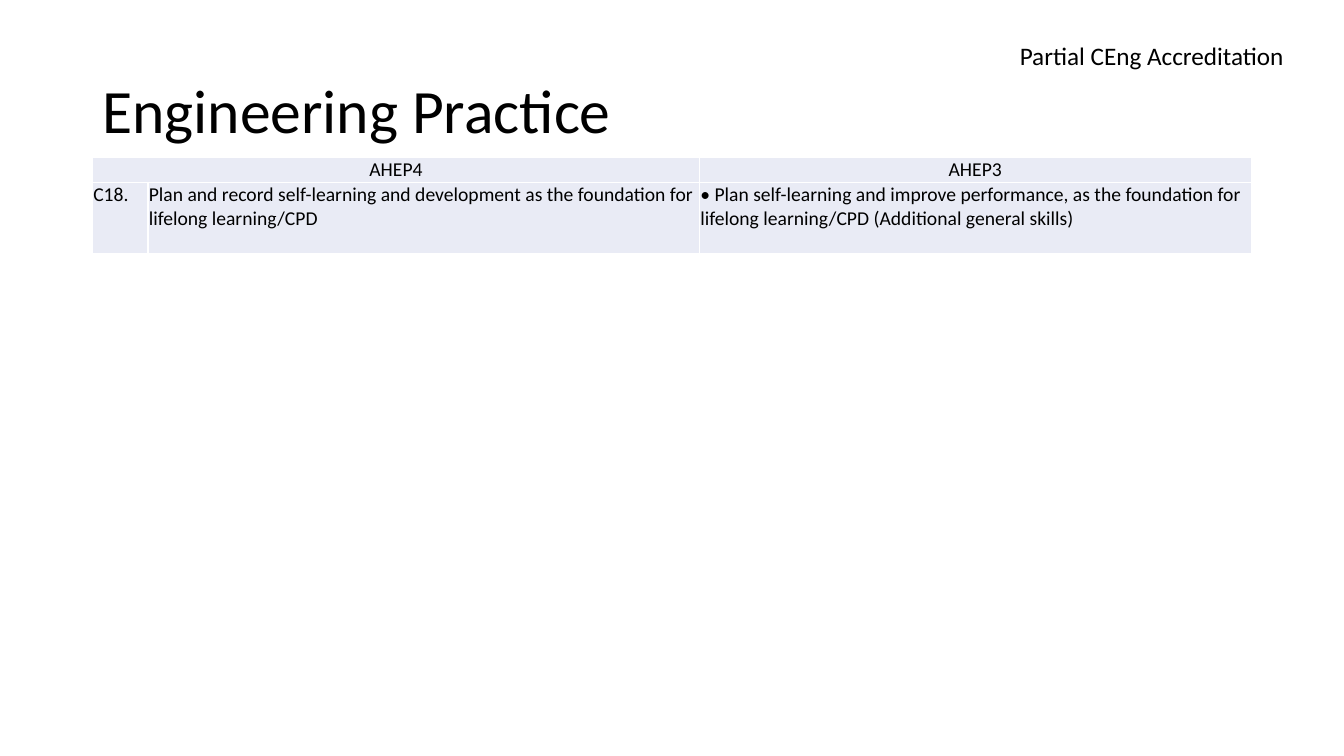
from pptx import Presentation
from pptx.dml.color import RGBColor
from pptx.enum.text import MSO_ANCHOR, PP_ALIGN
from pptx.util import Cm, Pt

TITLE = "Engineering Practice"
LABEL = "Partial CEng Accreditation"
ROWS = [
    ("AHEP4", "", "AHEP3"),
    (
        "C18.",
        "Plan and record self-learning and development as the foundation for lifelong learning/CPD",
        "• Plan self-learning and improve performance, as the foundation for "
        "lifelong learning/CPD (Additional general skills)",
    ),
]
COLUMN_WIDTHS = (1.4, 13.9, 13.9)
ROW_HEIGHTS = (0.62, 1.8)
LEFT = 2.33
WIDTH = sum(COLUMN_WIDTHS)
FONT = "Calibri"
BLACK = RGBColor(0x00, 0x00, 0x00)
PALE_BLUE = RGBColor(0xE9, 0xEB, 0xF5)


def write(frame, text, size):
    para = frame.paragraphs[0]
    para.text = text
    para.font.name = FONT
    para.font.size = Pt(size)
    para.font.color.rgb = BLACK
    return para


def add_text(page, text, size, left, top, width, height):
    frame = page.shapes.add_textbox(Cm(left), Cm(top), Cm(width), Cm(height)).text_frame
    frame.word_wrap = True
    frame.vertical_anchor = MSO_ANCHOR.MIDDLE
    return write(frame, text, size)


def add_outcomes(page):
    table = page.shapes.add_table(
        len(ROWS), len(COLUMN_WIDTHS), Cm(LEFT), Cm(3.97), Cm(WIDTH), Cm(sum(ROW_HEIGHTS))
    ).table
    table.first_row = False
    table.horz_banding = False
    for column, width in zip(table.columns, COLUMN_WIDTHS):
        column.width = Cm(width)
    for row, height, texts in zip(table.rows, ROW_HEIGHTS, ROWS):
        row.height = Cm(height)
        for cell, text in zip(row.cells, texts):
            cell.fill.solid()
            cell.fill.fore_color.rgb = PALE_BLUE
            cell.margin_left = cell.margin_right = cell.margin_top = Cm(0.02)
            cell.margin_bottom = 0
            para = write(cell.text_frame, text, 14)
            if texts is ROWS[0]:
                para.alignment = PP_ALIGN.CENTER
    table.cell(0, 0).merge(table.cell(0, 1))


def main():
    deck = Presentation()
    deck.slide_width, deck.slide_height = Cm(33.87), Cm(19.05)
    page = deck.slides.add_slide(deck.slide_layouts[6])
    title = add_text(page, TITLE, 44, LEFT, 1.01, WIDTH, 3.68)
    title.line_spacing = 0.9
    add_outcomes(page)
    add_text(page, LABEL, 18, 25.45, 0.87, 7.9, 1.03)
    deck.save("out.pptx")


if __name__ == "__main__":
    main()
